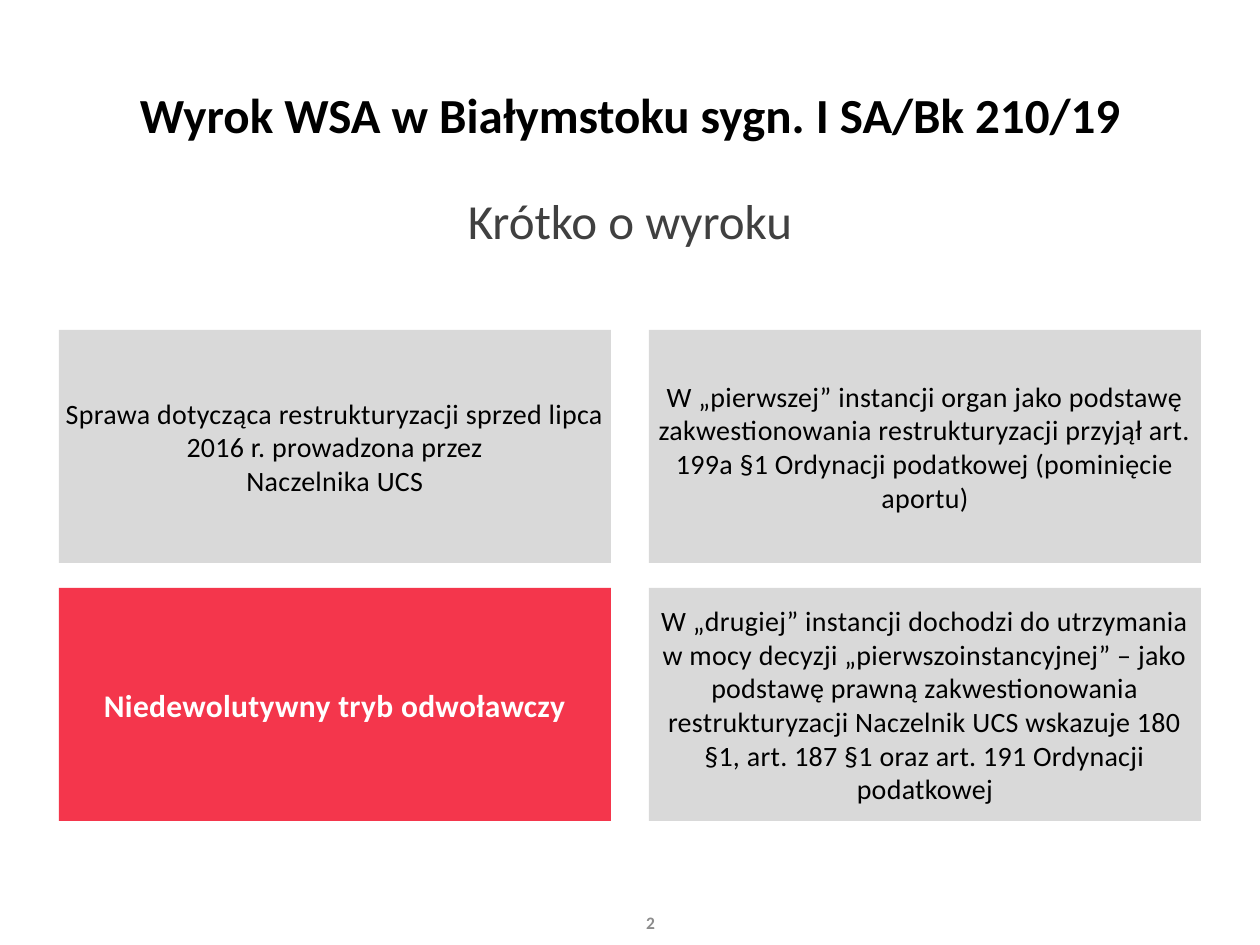
import copy

import pptx
import pptx.dml.color
import pptx.enum.shapes
import pptx.enum.text
import pptx.oxml.ns
import pptx.util

EMU_PER_PX = 914400 / 126
COLOURS = {
    "black": "000000",
    "white": "FFFFFF",
    "dark": "404040",
    "number": "8C8C8C",
    "panel": "D9D9D9",
    "accent": "F4364C",
}
ALIGN = pptx.enum.text.PP_ALIGN
ANCHOR = pptx.enum.text.MSO_ANCHOR


def px(length):
    return pptx.util.Emu(round(length * EMU_PER_PX))


def colour(name):
    return pptx.dml.color.RGBColor.from_string(COLOURS[name])


def write(box, text, *, size, ink, bold=False, align=ALIGN.CENTER, anchor=ANCHOR.MIDDLE,
          insets=(13, 6, 13, 6), line_spacing=None, after=None, tracking=None):
    """Fill a box with one paragraph; a vertical tab in the text breaks the line."""
    frame = box.text_frame
    frame.word_wrap = True
    frame.vertical_anchor = anchor
    frame.margin_left, frame.margin_top, frame.margin_right, frame.margin_bottom = map(px, insets)
    para = frame.paragraphs[0]
    para.alignment = align
    para.line_spacing = line_spacing
    para.space_after = after
    para.text = text
    for span in para.runs:
        span.font.name = "Calibri"
        span.font.size = pptx.util.Pt(size)
        span.font.bold = bold
        span.font.color.rgb = colour(ink)
        if tracking:
            span.font._element.set("spc", str(tracking))
    for line_break in para._p.findall(pptx.oxml.ns.qn("a:br")):
        line_break.append(copy.deepcopy(para.runs[0].font._element))


class Page:
    def __init__(self, deck):
        self.slide = deck.slides.add_slide(deck.slide_layouts[6])

    def label(self, text, left, top, width, height, **style):
        box = self.slide.shapes.add_textbox(*map(px, (left, top, width, height)))
        write(box, text, **style)

    def panel(self, text, left, top, width, height, fill="panel", **style):
        box = self.slide.shapes.add_shape(
            pptx.enum.shapes.MSO_SHAPE.RECTANGLE, *map(px, (left, top, width, height)))
        box.shadow.inherit = False
        box.fill.solid()
        box.fill.fore_color.rgb = colour(fill)
        box.line.fill.background()
        write(box, text, insets=(0, 10, 0, 10), after=pptx.util.Pt(18), tracking=20, **style)


def main():
    deck = pptx.Presentation()
    deck.slide_width, deck.slide_height = px(1260), px(945)
    page = Page(deck)

    page.label("Wyrok WSA w Białymstoku sygn. I SA/Bk 210/19", 0, 79, 1260, 71,
               size=28, ink="black", bold=True, anchor=ANCHOR.BOTTOM,
               insets=(13, 0, 13, 6), line_spacing=0.9)
    page.label("Krótko o wyroku", 0, 131, 1260, 185, size=28, ink="dark", line_spacing=0.9)
    page.label("2", 592, 898, 76, 50, size=10, ink="number", bold=True, align=ALIGN.RIGHT)

    plain = {"size": 16, "ink": "black"}
    accent = {"size": 18, "ink": "white", "bold": True, "fill": "accent"}
    panels = [
        ("Sprawa dotycząca restrukturyzacji sprzed lipca 2016 r. prowadzona przez"
         "\vNaczelnika UCS", plain),
        ("W „pierwszej” instancji organ jako podstawę zakwestionowania restrukturyzacji "
         "przyjął art. 199a §1 Ordynacji podatkowej (pominięcie aportu)", plain),
        ("Niedewolutywny tryb odwoławczy", accent),
        ("W „drugiej” instancji dochodzi do utrzymania w mocy decyzji „pierwszoinstancyjnej” "
         "– jako podstawę prawną zakwestionowania restrukturyzacji Naczelnik UCS wskazuje "
         "180 §1, art. 187 §1 oraz art. 191 Ordynacji podatkowej", plain),
    ]
    for index, (text, style) in enumerate(panels):
        row, column = divmod(index, 2)
        page.panel(text, 59 + 590 * column, 330 + 258 * row, 552, 233, **style)

    deck.save("out.pptx")


if __name__ == "__main__":
    main()
